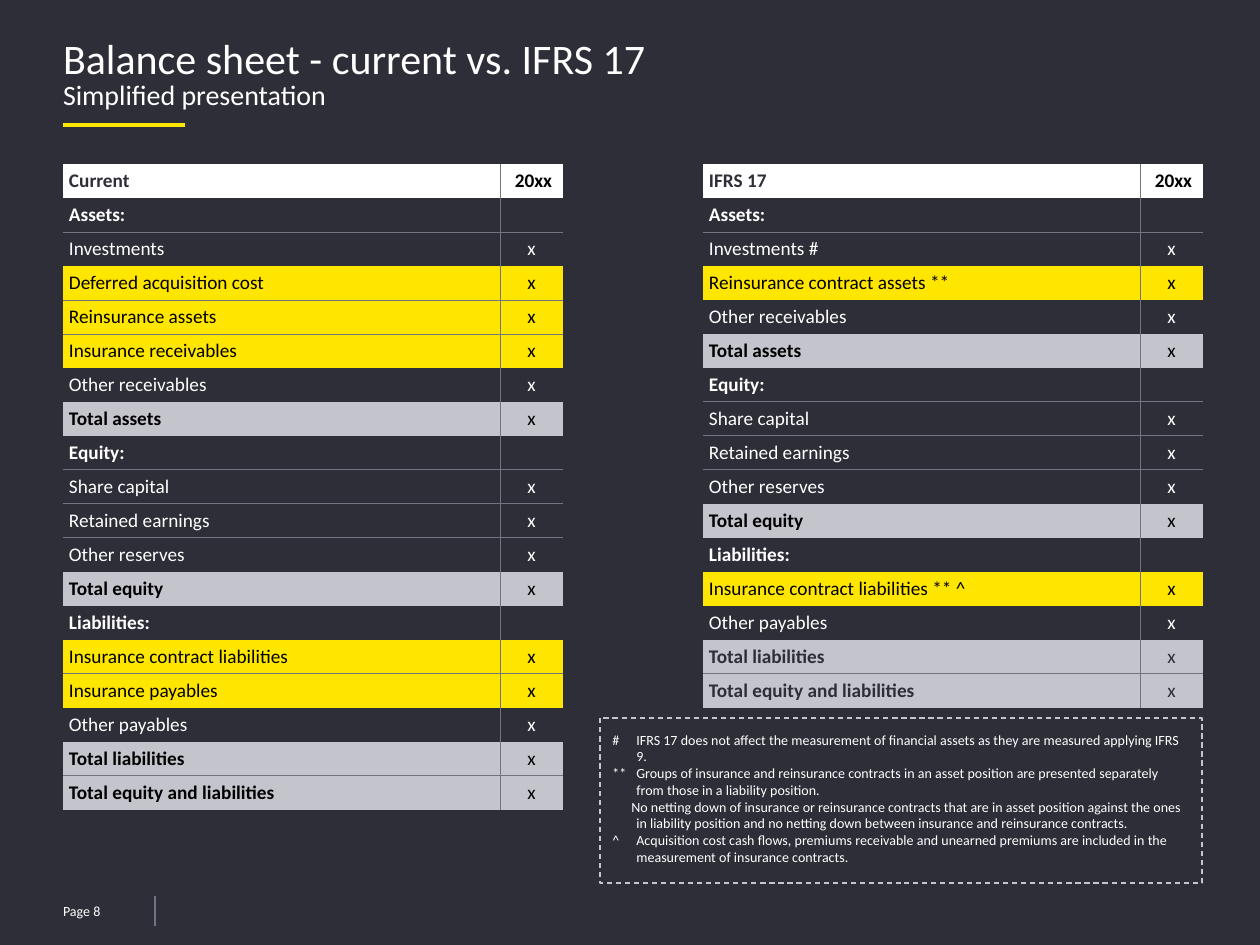
"""Build the balance sheet comparison slide, current against IFRS 17."""
from dataclasses import dataclass

from lxml import etree
from pptx import Presentation
from pptx.dml.color import RGBColor
from pptx.enum.dml import MSO_LINE
from pptx.enum.shapes import MSO_CONNECTOR, MSO_SHAPE
from pptx.enum.text import MSO_ANCHOR, PP_ALIGN
from pptx.oxml.ns import qn
from pptx.util import Emu, Pt

STRAIGHT = MSO_CONNECTOR.STRAIGHT
RECT = MSO_SHAPE.RECTANGLE
DASH = MSO_LINE.DASH
TOP, MIDDLE = MSO_ANCHOR.TOP, MSO_ANCHOR.MIDDLE
LEFT, CENTER = PP_ALIGN.LEFT, PP_ALIGN.CENTER


@dataclass(frozen=True)
class Theme:
    """Colours, font and type sizes of the slide."""
    dark: str = "2E2E38"
    white: str = "FFFFFF"
    black: str = "000000"
    yellow: str = "FFE600"
    grey: str = "C4C4CD"
    rule: str = "747480"
    font: str = "Calibri"
    title: int = 24
    sub: int = 16
    body: int = 11
    small: int = 8


THEME = Theme()


@dataclass(frozen=True)
class Kind:
    """Look of one sort of table row."""
    fill: str = ""
    ink: str = THEME.white
    bold: bool = False
    mark: str = "x"


HEAD = Kind(THEME.white, THEME.dark, True, "20xx")
PART = Kind(bold=True, mark="")
ITEM = Kind()
CHANGE = Kind(THEME.yellow, THEME.black)
TOTAL = Kind(THEME.grey, THEME.black, True)
SOFT = Kind(THEME.grey, THEME.dark, True)


@dataclass(frozen=True)
class Row:
    """One line of a balance sheet."""
    text: str
    kind: Kind = ITEM


@dataclass(frozen=True)
class Note:
    """A footnote with its hanging first line in px."""
    text: str
    hang: int = 24


EQUITY = [Row("Equity:", PART), Row("Share capital"), Row("Retained earnings"),
          Row("Other reserves"), Row("Total equity", TOTAL), Row("Liabilities:", PART)]
CURRENT = [
    Row("Current", HEAD), Row("Assets:", PART), Row("Investments"),
    Row("Deferred acquisition cost", CHANGE), Row("Reinsurance assets", CHANGE),
    Row("Insurance receivables", CHANGE), Row("Other receivables"),
    Row("Total assets", TOTAL), *EQUITY,
    Row("Insurance contract liabilities", CHANGE), Row("Insurance payables", CHANGE),
    Row("Other payables"), Row("Total liabilities", TOTAL),
    Row("Total equity and liabilities", TOTAL),
]
IFRS = [
    Row("IFRS 17", HEAD), Row("Assets:", PART), Row("Investments #"),
    Row("Reinsurance contract assets **", CHANGE), Row("Other receivables"),
    Row("Total assets", TOTAL), *EQUITY,
    Row("Insurance contract liabilities ** ^", CHANGE), Row("Other payables"),
    Row("Total liabilities", SOFT), Row("Total equity and liabilities", SOFT),
]
NOTES = [
    Note("#\tIFRS 17 does not affect the measurement of financial assets as they are "
         "measured applying IFRS 9."),
    Note("**\tGroups of insurance and reinsurance contracts in an asset position are "
         "presented separately from those in a liability position."),
    Note("No netting down of insurance or reinsurance contracts that are in asset position "
         "against the ones in liability position and no netting down between insurance and "
         "reinsurance contracts.", 5),
    Note("^\tAcquisition cost cash flows, premiums receivable and unearned premiums are "
         "included in the measurement of insurance contracts."),
]


def px(count: int) -> Emu:
    """Turn px into EMU."""
    return Emu(round(count * 914400 / 126))


def rgb(code: str) -> RGBColor:
    """Turn a hex code into a colour."""
    return RGBColor.from_string(code)


def style(para, size: int, ink: str = THEME.white, bold: bool = False) -> None:
    """Format every run of a paragraph."""
    for run in para.runs:
        run.font.name, run.font.size, run.font.bold = THEME.font, Pt(size), bold
        run.font.color.rgb = rgb(ink)


def clear(frame) -> None:
    """Take the insets off a text frame."""
    frame.margin_left = frame.margin_right = frame.margin_top = frame.margin_bottom = 0


def edge(cell, side: str, shown: bool) -> None:
    """Draw or hide one border of a cell."""
    line = etree.SubElement(cell._tc.get_or_add_tcPr(), qn(f"a:ln{side}"), w=str(Pt(0.5)))
    if shown:
        fill = etree.SubElement(line, qn("a:solidFill"))
        etree.SubElement(fill, qn("a:srgbClr"), val=THEME.rule)
    else:
        etree.SubElement(line, qn("a:noFill"))


def fill_cell(cell, text: str, kind: Kind, first: bool, above: bool, below: bool) -> None:
    """Write and format one table cell."""
    clear(cell)
    cell.vertical_anchor = MIDDLE
    cell.margin_left = px(6 if first else 4 if kind is HEAD else 0)
    for side, shown in zip("LRTB", (not first, first, above, below)):
        edge(cell, side, shown)
    if kind.fill:
        cell.fill.solid()
        cell.fill.fore_color.rgb = rgb(kind.fill)
    else:
        cell.fill.background()
    cell.text = text
    para = cell.text_frame.paragraphs[0]
    para.alignment = LEFT if first else CENTER
    para._p.get_or_add_endParaRPr().set("sz", str(THEME.body * 100))
    ink = THEME.black if kind is HEAD and not first else kind.ink
    style(para, THEME.body, ink, kind.bold and (first or kind is HEAD))


def add_sheet(slide, left: int, rows: list[Row]) -> None:
    """Add a balance sheet, ruled between rows of the same fill."""
    high, wide = 34, (437, 63)
    table = slide.shapes.add_table(len(rows), 2, px(left), px(164), px(sum(wide)),
                                   px(high * len(rows))).table
    table.first_row = table.horz_banding = False
    for col, width in zip(table.columns, wide):
        col.width = px(width)
    fills = [None, *(row.kind.fill for row in rows), None]
    for at, row in enumerate(rows):
        table.rows[at].height = px(high)
        above, below = fills[at] == fills[at + 1], fills[at + 1] == fills[at + 2]
        for col, text in enumerate((row.text, row.kind.mark)):
            fill_cell(table.cell(at, col), text, row.kind, col == 0, above, below)


def add_line(slide, ends: tuple[int, int, int, int], ink: str, width: float) -> None:
    """Add a straight line."""
    line = slide.shapes.add_connector(STRAIGHT, *map(px, ends))
    line.line.color.rgb, line.line.width = rgb(ink), Pt(width)
    etree.SubElement(line._element.spPr, qn("a:effectLst"))


def add_title(slide) -> None:
    """Place and format the two-line title."""
    title = slide.shapes.title
    title.left, title.top, title.width, title.height = map(px, (63, 40, 1134, 82))
    frame = title.text_frame
    clear(frame)
    frame.vertical_anchor = TOP
    frame.text = "Balance sheet - current vs. IFRS 17\vSimplified presentation"
    para = frame.paragraphs[0]
    para.alignment, para.line_spacing = LEFT, 0.85
    style(para, THEME.title)
    para.runs[1].font.size = Pt(THEME.sub)


def add_notes(slide) -> None:
    """Add the footnotes and their dashed frame."""
    frame = slide.shapes.add_textbox(*map(px, (600, 725, 602, 165))).text_frame
    frame.word_wrap = True
    for at, note in enumerate(NOTES):
        para = frame.add_paragraph() if at else frame.paragraphs[0]
        para.text = note.text
        props = para._p.get_or_add_pPr()
        props.set("marL", str(px(24)))
        props.set("indent", str(-px(note.hang)))
        tabs = etree.SubElement(props, qn("a:tabLst"))
        etree.SubElement(tabs, qn("a:tab"), pos=str(px(24)), algn="l")
        style(para, THEME.small)
    box = slide.shapes.add_shape(RECT, *map(px, (600, 718, 602, 165)))
    box.shadow.inherit = False
    box.fill.background()
    box.line.color.rgb, box.line.width = rgb(THEME.grey), Pt(0.75)
    box.line.dash_style = DASH


def add_page(slide) -> None:
    """Add the page number and its divider."""
    frame = slide.shapes.add_textbox(*map(px, (63, 898, 92, 25))).text_frame
    clear(frame)
    frame.word_wrap, frame.vertical_anchor = True, MIDDLE
    frame.text = "Page 8"
    style(frame.paragraphs[0], THEME.small)
    add_line(slide, (155, 896, 155, 926), THEME.rule, 0.75)


def main() -> None:
    """Build and save the slide."""
    deck = Presentation()
    deck.slide_width, deck.slide_height = px(1260), px(945)
    slide = deck.slides.add_slide(deck.slide_layouts[5])
    slide.background.fill.solid()
    slide.background.fill.fore_color.rgb = rgb(THEME.dark)
    add_line(slide, (63, 125, 185, 125), THEME.yellow, 2.25)
    add_title(slide)
    add_page(slide)
    add_sheet(slide, 63, CURRENT)
    add_sheet(slide, 703, IFRS)
    add_notes(slide)
    deck.save("out.pptx")


if __name__ == "__main__":
    main()
